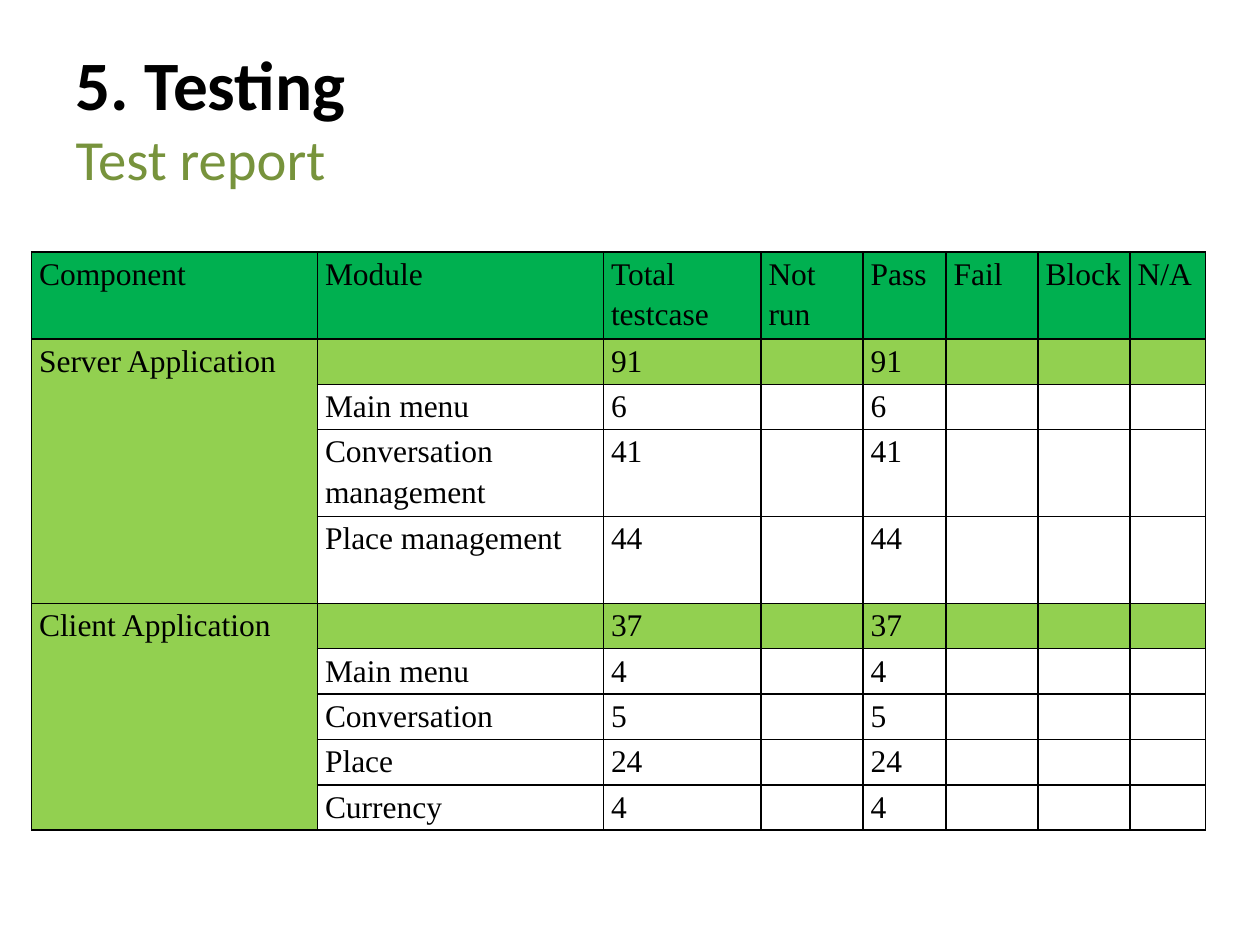
import lxml.etree
import pptx
import pptx.dml.color
import pptx.enum.text
import pptx.oxml.ns
import pptx.util

Inches = pptx.util.Inches
Pt = pptx.util.Pt
RGBColor = pptx.dml.color.RGBColor
qn = pptx.oxml.ns.qn

BLACK = RGBColor(0x00, 0x00, 0x00)
OLIVE = RGBColor(0x77, 0x93, 0x3C)
HEADER_GREEN = RGBColor(0x00, 0xB0, 0x50)
TOTAL_GREEN = RGBColor(0x92, 0xD0, 0x50)

HEADINGS = ["Component", "Module", "Total testcase", "Not run", "Pass", "Fail", "Block", "N/A"]
COLUMN_WIDTHS = [2.27, 2.27, 1.25, 0.81, 0.66, 0.73, 0.73, 0.6]
ROW_HEIGHTS = [0.69, 0.36, 0.36, 0.69, 0.69] + [0.36] * 5
COMPONENTS = {
    "Server Application": [("", 91), ("Main menu", 6), ("Conversation management", 41),
                           ("Place management", 44)],
    "Client Application": [("", 37), ("Main menu", 4), ("Conversation", 5), ("Place", 24),
                           ("Currency", 4)],
}


def add_run(paragraph, text, size, name, color, bold=False):
    run = paragraph.add_run()
    run.text = text
    for attribute, value in {"size": Pt(size), "name": name, "bold": bold}.items():
        setattr(run.font, attribute, value)
    run.font.color.rgb = color


def format_cell(cell, text, fill):
    margins = {"margin_left": 0.06, "margin_right": 0.06, "margin_top": 0, "margin_bottom": 0}
    for attribute, value in margins.items():
        setattr(cell, attribute, Inches(value))
    # Borders come before the fill in the cell properties
    properties = cell._tc.get_or_add_tcPr()
    for side in ("a:lnL", "a:lnR", "a:lnT", "a:lnB"):
        line = lxml.etree.SubElement(properties, qn(side), w=str(Pt(1)))
        solid = lxml.etree.SubElement(line, qn("a:solidFill"))
        lxml.etree.SubElement(solid, qn("a:srgbClr"), val=str(BLACK))
    if fill is None:
        cell.fill.background()
    else:
        cell.fill.solid()
        cell.fill.fore_color.rgb = fill
    if text:
        paragraph = cell.text_frame.paragraphs[0]
        paragraph.line_spacing = 1.15
        add_run(paragraph, text, 18, "Times New Roman", BLACK)


presentation = pptx.Presentation()
presentation.slide_width = Inches(10)
presentation.slide_height = Inches(7.5)
slide = presentation.slides.add_slide(presentation.slide_layouts[5])

# Title with subtitle line
title = slide.shapes.title
for attribute, value in {"left": 0.5, "top": 0.3, "width": 9, "height": 1.25}.items():
    setattr(title, attribute, Inches(value))
title.text_frame.auto_size = pptx.enum.text.MSO_AUTO_SIZE.NONE
title.text_frame.vertical_anchor = pptx.enum.text.MSO_ANCHOR.MIDDLE
paragraph = title.text_frame.paragraphs[0]
paragraph.alignment = pptx.enum.text.PP_ALIGN.LEFT
add_run(paragraph, "5. Testing", 39.6, "Calibri", BLACK, bold=True)
paragraph.add_line_break()
lxml.etree.SubElement(paragraph._p[-1], qn("a:rPr"), sz="3960")
add_run(paragraph, "Test report", 32.4, "Calibri", OLIVE)

# Test report table
table = slide.shapes.add_table(
    len(ROW_HEIGHTS), len(COLUMN_WIDTHS), Inches(0.25), Inches(2),
    Inches(sum(COLUMN_WIDTHS)), Inches(sum(ROW_HEIGHTS))).table
table.first_row = False
table.horz_banding = False
for column, width in zip(table.columns, COLUMN_WIDTHS):
    column.width = Inches(width)
for row, height in zip(table.rows, ROW_HEIGHTS):
    row.height = Inches(height)

# Header row
for cell, heading in zip(table.rows[0].cells, HEADINGS):
    format_cell(cell, heading, HEADER_GREEN)

# One block of rows per component: totals first, then modules; every test passed
first = 1
for component, modules in COMPONENTS.items():
    for offset, (module, count) in enumerate(modules):
        is_total = offset == 0
        values = [component if is_total else "", module, str(count), "", str(count), "", "", ""]
        for index, value in enumerate(values):
            fill = TOTAL_GREEN if is_total or index == 0 else None
            format_cell(table.cell(first + offset, index), value, fill)
    table.cell(first, 0).merge(table.cell(first + len(modules) - 1, 0))
    first += len(modules)

presentation.save("out.pptx")
